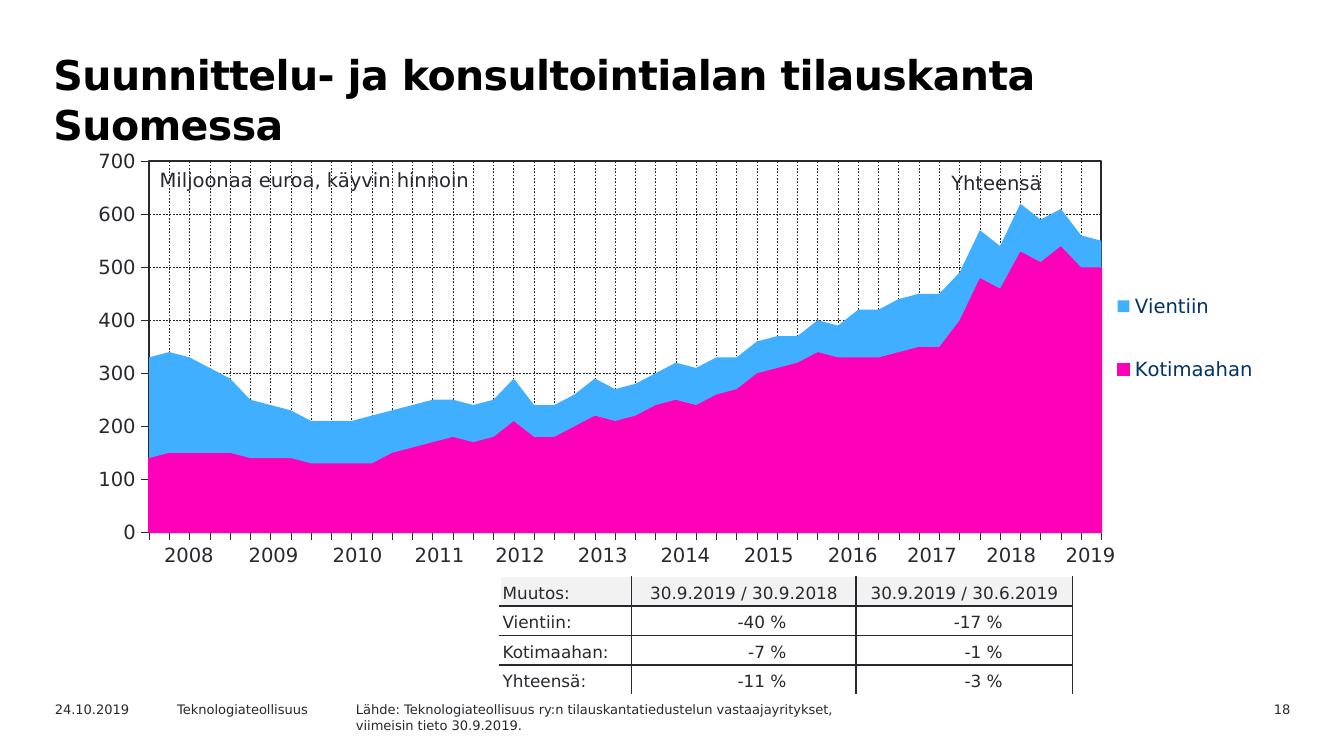
from lxml import etree
from pptx import Presentation
from pptx.chart.data import CategoryChartData
from pptx.dml.color import RGBColor
from pptx.enum.chart import (XL_CHART_TYPE, XL_LEGEND_POSITION, XL_TICK_LABEL_POSITION,
                             XL_TICK_MARK)
from pptx.enum.dml import MSO_LINE
from pptx.enum.text import MSO_ANCHOR, PP_ALIGN
from pptx.oxml import parse_xml
from pptx.oxml.ns import nsdecls, qn
from pptx.util import Inches, Pt

BLACK = RGBColor(0x00, 0x00, 0x00)
INK = RGBColor(0x29, 0x28, 0x2E)
NAVY = RGBColor(0x00, 0x33, 0x66)
PINK = RGBColor(0xFF, 0x00, 0xB8)
BLUE = RGBColor(0x40, 0xAF, 0xFF)
GREY = RGBColor(0xF2, 0xF2, 0xF2)
WHITE = RGBColor(0xFF, 0xFF, 0xFF)

FONT = "DejaVu Sans"
LEFT, CENTER, RIGHT = PP_ALIGN.LEFT, PP_ALIGN.CENTER, PP_ALIGN.RIGHT
OUTSIDE, NO_TICK = XL_TICK_MARK.OUTSIDE, XL_TICK_MARK.NONE
DASH = MSO_LINE.DASH
PLAIN_TABLE_STYLE = "{2D5ABB26-0587-4C30-8999-92F81FD0307C}"

DOMESTIC = [140, 150, 150, 150, 150, 140, 140, 140, 130, 130, 130, 130,
            150, 160, 170, 180, 170, 180, 210, 180, 180, 200, 220, 210,
            220, 240, 250, 240, 260, 270, 300, 310, 320, 340, 330, 330,
            330, 340, 350, 350, 400, 480, 460, 530, 510, 540, 500, 500]
EXPORT = [190, 190, 180, 160, 140, 110, 100, 90, 80, 80, 80, 90,
          80, 80, 80, 70, 70, 70, 80, 60, 60, 60, 70, 60,
          60, 60, 70, 70, 70, 60, 60, 60, 50, 60, 60, 90,
          90, 100, 100, 100, 90, 90, 80, 90, 80, 70, 60, 50]
YEAR_WIDTHS = [0.61, 0.65, 0.6, 0.62, 0.58, 0.65, 0.58, 0.66, 0.59, 0.59, 0.59, 0.59]
CHANGES = [["Muutos:", "30.9.2019 / 30.9.2018", "30.9.2019 / 30.6.2019"],
           ["Vientiin:", "-40 %", "-17 %"],
           ["Kotimaahan:", "-7 %", "-1 %"],
           ["Yhteensä:", "-11 %", "-3 %"]]


def set_font(font, size, color=INK, bold=False, name=FONT):
    font.name, font.size, font.bold = name, Pt(size), bold
    font.color.rgb = color


def add_text(slide, box, lines, size, align=LEFT, color=INK, bold=False, wrap=True):
    frame = slide.shapes.add_textbox(*map(Inches, box)).text_frame
    frame.word_wrap = wrap
    frame.text = "\n".join(lines)
    for paragraph in frame.paragraphs:
        paragraph.alignment = align
        set_font(paragraph.font, size, color, bold)
    return frame


def add_title(slide):
    title = "Suunnittelu- ja konsultointialan tilauskanta Suomessa"
    frame = add_text(slide, (0.28, 0.31, 8.74, 0.71), [title], 22, color=BLACK, bold=True)
    paragraph = frame.paragraphs[0]
    paragraph.line_spacing = Pt(27)
    paragraph._p.get_or_add_pPr().set("marL", str(Inches(0.02)))
    paragraph.runs[0]._r.get_or_add_rPr().set("spc", "-30")


def manual_layout(x, y, width, height, inner=False):
    target = '<c:layoutTarget val="inner"/>' if inner else ""
    return parse_xml(
        f'<c:layout {nsdecls("c")}><c:manualLayout>{target}'
        '<c:xMode val="edge"/><c:yMode val="edge"/>'
        f'<c:x val="{x}"/><c:y val="{y}"/><c:w val="{width}"/><c:h val="{height}"/>'
        '</c:manualLayout></c:layout>')


def style_axis(axis):
    axis.major_tick_mark, axis.minor_tick_mark = OUTSIDE, NO_TICK
    axis.format.line.color.rgb = INK
    axis.format.line.width = Pt(0.22)
    axis.has_major_gridlines = True
    grid = axis.major_gridlines.format.line
    grid.color.rgb = INK
    grid.width = Pt(0.25)
    grid.dash_style = DASH


def frame_plot(chart):
    """Place the plot area and draw its outline."""
    plot_area = chart._chartSpace.chart.plotArea
    for layout in plot_area.findall(qn("c:layout")):
        plot_area.remove(layout)
    plot_area.insert(0, manual_layout(0.075, 0.029, 0.772, 0.885, inner=True))
    plot_area.append(parse_xml(
        f'<c:spPr {nsdecls("c", "a")}><a:noFill/><a:ln w="12700"><a:solidFill>'
        f'<a:srgbClr val="{INK}"/></a:solidFill></a:ln></c:spPr>'))


def add_legend(chart):
    chart.has_legend = True
    legend = chart.legend
    legend.position = XL_LEGEND_POSITION.RIGHT
    legend.include_in_layout = False
    set_font(legend.font, 10.5, NAVY)
    element = legend._element
    for layout in element.findall(qn("c:layout")):
        element.remove(layout)
    element.find(qn("c:legendPos")).addnext(manual_layout(0.85, 0.25, 0.13, 0.4))


def add_order_chart(slide):
    data = CategoryChartData(number_format="#,##0")
    data.categories = [str(quarter) for quarter in range(1, len(DOMESTIC) + 1)]
    data.add_series("Kotimaahan", DOMESTIC)
    data.add_series("Vientiin", EXPORT)
    box = map(Inches, (0.42, 1.11, 9.18, 3.12))
    chart = slide.shapes.add_chart(XL_CHART_TYPE.AREA_STACKED, *box, data).chart
    chart.has_title = False
    set_font(chart.font, 18.2, bold=True, name="Arial")
    chart.plots[0].vary_by_categories = False

    domestic, export = chart.plots[0].series
    for series, color in ((domestic, PINK), (export, BLUE)):
        series.format.fill.solid()
        series.format.fill.fore_color.rgb = color
    domestic.format.line.color.rgb = PINK
    domestic.format.line.width = Pt(0.88)
    export.format.line.fill.background()

    quarters, euros = chart.category_axis, chart.value_axis
    style_axis(quarters)
    style_axis(euros)
    quarters.tick_label_position = XL_TICK_LABEL_POSITION.NONE
    euros.minimum_scale, euros.maximum_scale, euros.major_unit = 0, 700, 100
    euros.tick_labels.number_format = "#,##0"
    euros.tick_labels.number_format_is_linked = False
    set_font(euros.tick_labels.font, 10.5)
    euros._element.find(qn("c:crossBetween")).set("val", "midCat")
    frame_plot(chart)
    add_legend(chart)


def add_plain_table(slide, left, top, widths, row_height, row_count):
    table = slide.shapes.add_table(
        row_count, len(widths), Inches(left), Inches(top),
        Inches(sum(widths)), Inches(row_height * row_count)).table
    table.first_row = table.horz_banding = False
    table._tbl.tblPr.find(qn("a:tableStyleId")).text = PLAIN_TABLE_STYLE
    for column, width in zip(table.columns, widths):
        column.width = Inches(width)
    return table


def fill_cell(cell, text, size, align, fill=None):
    cell.text = text
    paragraph = cell.text_frame.paragraphs[0]
    paragraph.alignment = align
    set_font(paragraph.font, size)
    if fill is None:
        cell.fill.background()
    else:
        cell.fill.solid()
        cell.fill.fore_color.rgb = fill


def set_borders(cell, colors):
    """Draw 1 pt borders; colors run left, right, top, bottom."""
    properties = cell._tc.get_or_add_tcPr()
    for position, (side, color) in enumerate(zip("LRTB", colors)):
        line = etree.Element(qn(f"a:ln{side}"), w=str(Pt(1)))
        solid = etree.SubElement(line, qn("a:solidFill"))
        etree.SubElement(solid, qn("a:srgbClr"), val=str(color))
        properties.insert(position, line)


def add_year_row(slide):
    table = add_plain_table(slide, 1.1, 4, YEAR_WIDTHS, 0.25, 1)
    for index in range(len(YEAR_WIDTHS)):
        fill_cell(table.cell(0, index), str(2008 + index), 10.5, CENTER)


def add_change_table(slide):
    table = add_plain_table(slide, 3.72, 4.29, [0.98, 1.67, 1.61], 0.22, len(CHANGES))
    last = len(CHANGES) - 1
    for r, row in enumerate(CHANGES):
        for c, text in enumerate(row):
            cell = table.cell(r, c)
            is_value = r > 0 and c > 0
            align = LEFT if c == 0 else RIGHT if is_value else CENTER
            fill_cell(cell, text, 9, align, {0: GREY, last: WHITE}.get(r))
            cell.vertical_anchor = MSO_ANCHOR.BOTTOM
            cell.margin_left = cell.margin_top = cell.margin_bottom = Inches(0.02)
            cell.margin_right = Inches(0.52 if is_value else 0.02)
            set_borders(cell, (WHITE if c == 0 else INK, INK,
                               WHITE if r == 0 else INK, WHITE if r == last else INK))


def add_footer(slide):
    add_text(slide, (8.76, 5.17, 0.94, 0.18), ["18"], 7, RIGHT)
    add_text(slide, (0.31, 5.17, 1, 0.18), ["24.10.2019"], 7)
    add_text(slide, (1.22, 5.17, 1.42, 0.18), ["Teknologiateollisuus"], 7)
    add_text(slide, (2.55, 5.17, 5, 0.26),
             ["Lähde: Teknologiateollisuus ry:n tilauskantatiedustelun vastaajayritykset,",
              "viimeisin tieto 30.9.2019."], 7)


def main():
    presentation = Presentation()
    presentation.slide_width = Inches(10)
    presentation.slide_height = presentation.slide_width * 9 // 16
    slide = presentation.slides.add_slide(presentation.slide_layouts[6])
    add_title(slide)
    add_footer(slide)
    add_order_chart(slide)
    add_year_row(slide)
    add_text(slide, (1.09, 1.2, 2.6, 0.27), ["Miljoonaa euroa, käyvin hinnoin"], 10.5, wrap=False)
    add_change_table(slide)
    add_text(slide, (6.98, 1.22, 1.06, 0.27), ["Yhteensä"], 10.5)
    presentation.save("out.pptx")


if __name__ == "__main__":
    main()
